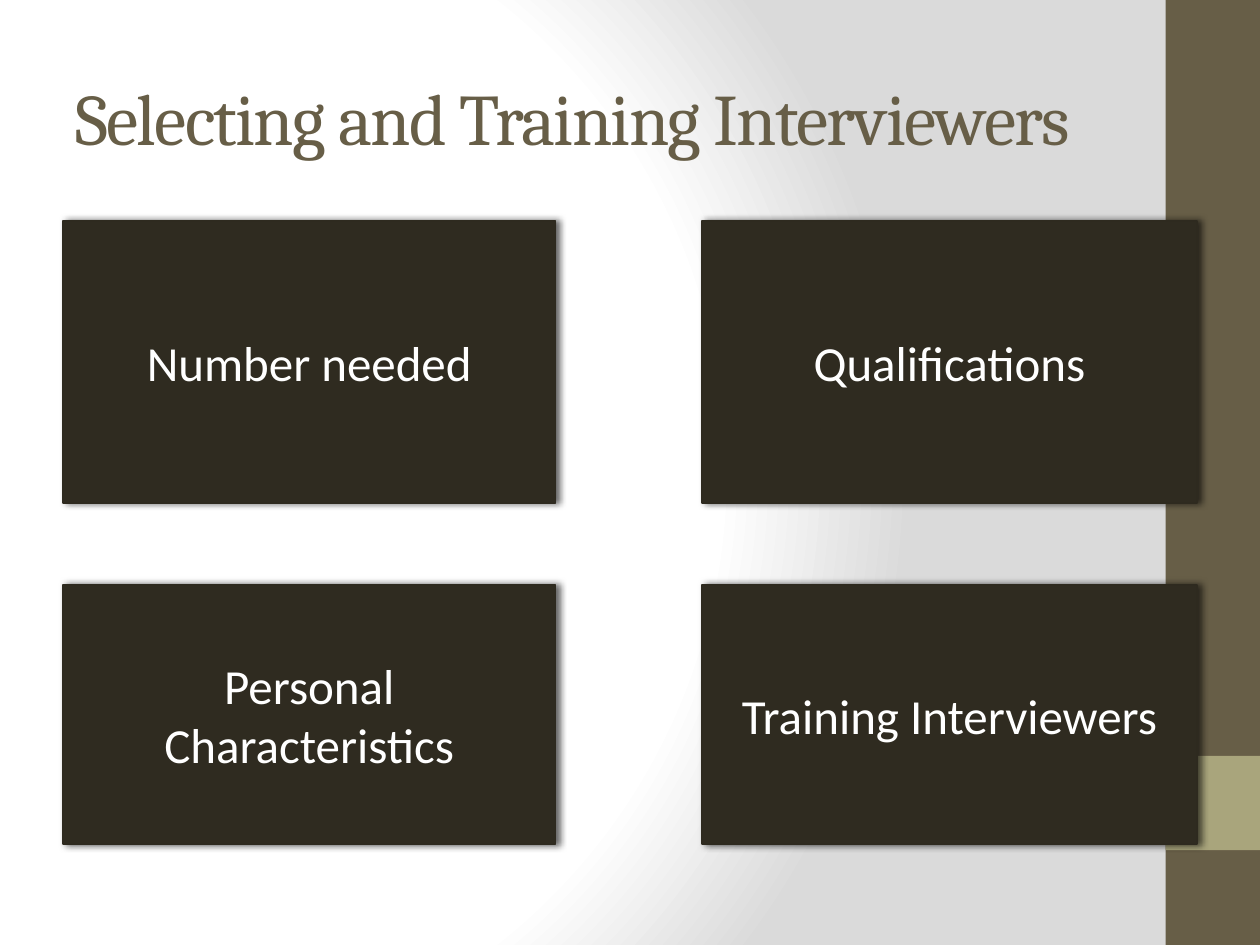
from dataclasses import dataclass

from lxml import etree
from pptx import Presentation
from pptx import util as u
from pptx.dml.color import RGBColor
from pptx.enum import shapes, text
from pptx.oxml import parse_xml
from pptx.oxml.ns import nsdecls, qn


@dataclass(frozen=True)
class Theme:
    brown: str = "675E47"
    olive: str = "A9A57C"
    dark: str = "2F2B20"
    edge: str = "2E2A1F"
    white: str = "FFFFFF"
    grey: str = "DADADA"
    shadow: str = "000000"
    heading_font: str = "Cambria"
    body_font: str = "Calibri"
    title_size: float = 41.4
    card_size: float = 28


theme = Theme()


def write(tf, content, *, font, size, color, align, spacing=None):
    tf.word_wrap = True
    tf.auto_size = text.MSO_AUTO_SIZE.NONE
    tf.vertical_anchor = text.MSO_ANCHOR.MIDDLE
    p = tf.paragraphs[0]
    p.alignment = align
    r = p.add_run()
    r.text = content
    r.font.name = font
    r.font.size = u.Pt(size)
    r.font.color.rgb = RGBColor.from_string(color)
    if spacing is not None:
        r.font._element.set("spc", str(round(spacing * 100)))


def add_rect(s, left, top, width, height, fill):
    """Add a borderless, shadowless rectangle measured in centimetres."""
    sp = s.shapes.add_shape(shapes.MSO_SHAPE.RECTANGLE,
                            u.Cm(left), u.Cm(top), u.Cm(width), u.Cm(height))
    sp.shadow.inherit = False
    sp.fill.solid()
    sp.fill.fore_color.rgb = RGBColor.from_string(fill)
    sp.line.fill.background()
    return sp


prs = Presentation()
prs.slide_width, prs.slide_height = u.Cm(25.4), u.Cm(19.05)
s = prs.slides.add_slide(prs.slide_layouts[5])

# Background: radial gradient centred left of the middle
s.background.fill.solid()
solid = s._element.find(".//" + qn("p:bgPr")).find(qn("a:solidFill"))
solid.getparent().replace(solid, parse_xml(
    f'<a:gradFill rotWithShape="1" {nsdecls("a")}><a:gsLst>'
    f'<a:gs pos="0"><a:srgbClr val="{theme.white}"/></a:gs>'
    f'<a:gs pos="75000"><a:srgbClr val="{theme.white}"/></a:gs>'
    f'<a:gs pos="100000"><a:srgbClr val="{theme.grey}"/></a:gs></a:gsLst>'
    '<a:path path="circle">'
    '<a:fillToRect l="20000" t="50000" r="100000" b="50000"/>'
    '</a:path></a:gradFill>'))

# Side band
add_rect(s, 23.5, 0, 1.9, 19.05, theme.brown)
add_rect(s, 23.5, 15.24, 1.9, 1.9, theme.olive)

# Title
title = s.shapes.title
title.left, title.top = u.Cm(1.27), u.Cm(0.76)
title.width, title.height = u.Cm(21.16), u.Cm(3.18)
write(title.text_frame, "Selecting and Training Interviewers",
      font=theme.heading_font, size=theme.title_size, color=theme.brown,
      align=text.PP_ALIGN.LEFT, spacing=-1)

# Two by two cards
columns = [(1.27, 9.93), (14.15, 9.98)]
rows = [(4.45, 5.69), (11.79, 5.23)]
cards = [["Number needed", "Qualifications"],
         ["Personal Characteristics", "Training Interviewers"]]
for (top, height), labels in zip(rows, cards):
    for (left, width), label in zip(columns, labels):
        sp = add_rect(s, left, top, width, height, theme.dark)
        sp.line.color.rgb = RGBColor.from_string(theme.edge)
        sp.line.width = u.Pt(1)
        effects = sp._element.spPr.find(qn("a:effectLst"))
        shadow = etree.SubElement(effects, qn("a:outerShdw"), dir="0",
                                  blurRad=str(u.Pt(4)), dist=str(u.Pt(2)),
                                  rotWithShape="0")
        color = etree.SubElement(shadow, qn("a:srgbClr"), val=theme.shadow)
        etree.SubElement(color, qn("a:alpha"), val="60000")
        tf = sp.text_frame
        tf.margin_left = tf.margin_right = u.Cm(0.3)
        write(tf, label, font=theme.body_font, size=theme.card_size,
              color=theme.white, align=text.PP_ALIGN.CENTER)

prs.save("out.pptx")
